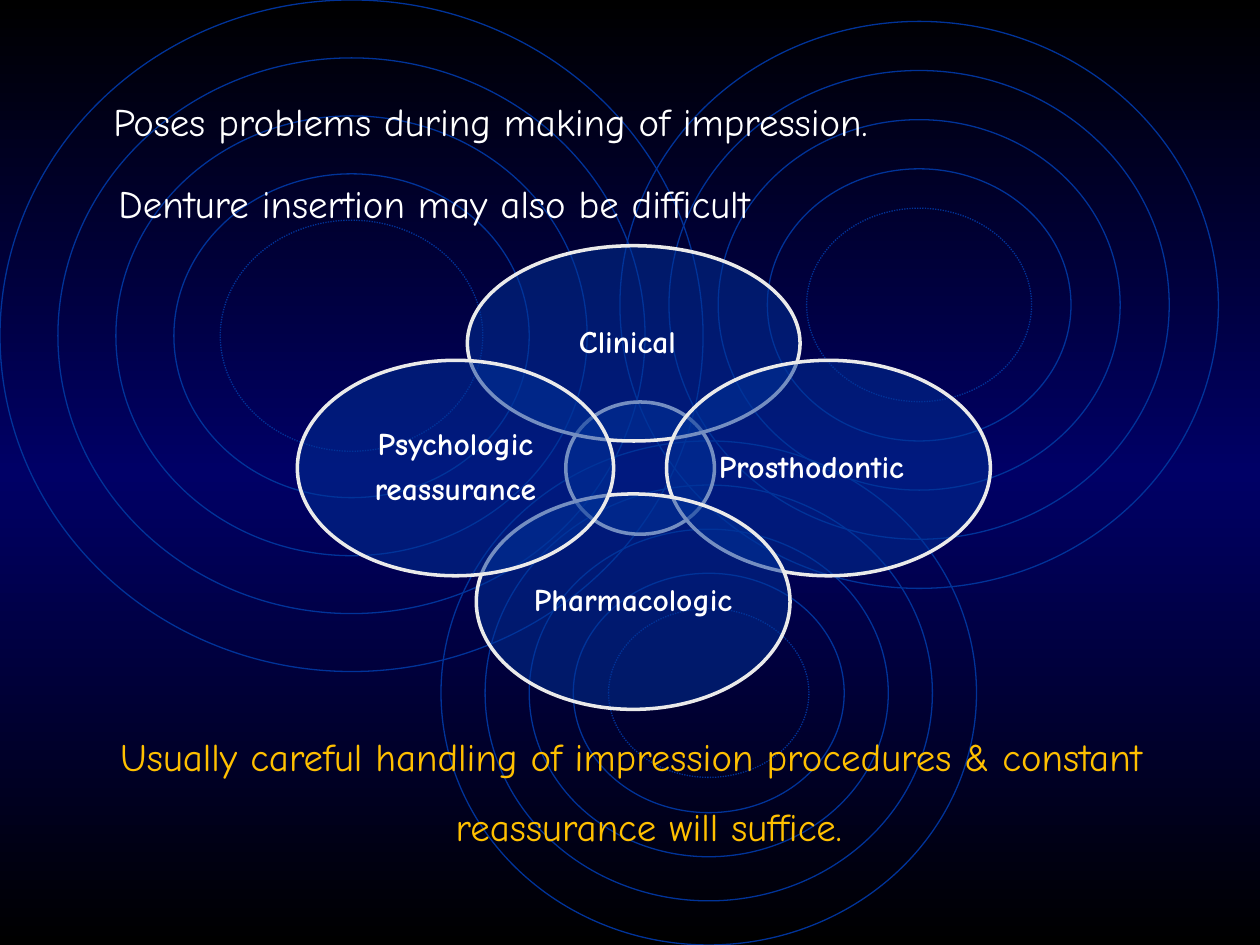
from copy import deepcopy

from lxml.etree import SubElement
from pptx import Presentation
from pptx.dml.color import RGBColor
from pptx.enum.dml import MSO_LINE
from pptx.enum.shapes import MSO_SHAPE
from pptx.enum.text import MSO_ANCHOR, MSO_AUTO_SIZE, PP_ALIGN
from pptx.oxml.ns import qn
from pptx.util import Inches, Pt


def color(value):
    """Turn a hex string into a colour."""
    return RGBColor.from_string(value)


class SlideBuilder:
    """Hold the style and the current slide."""

    font = "Comic Neue"
    ring_color = "003399"
    outline = "EAEAEA"
    white = "FFFFFF"
    gold = "FFC000"

    def __init__(self, deck):
        """Add a page with a body placeholder only."""
        self.page = deck.slides.add_slide(deck.slide_layouts[1])
        title = self.page.shapes.title.element
        title.getparent().remove(title)

    def background(self, edge, middle):
        """Paint a vertical gradient from edge to middle and back."""
        fill = self.page.background.fill
        fill.gradient()
        fill.gradient_angle = 90
        stops = self.page.element.find(".//" + qn("a:gsLst"))
        stops.append(deepcopy(stops[-1]))
        for stop, position, value in zip(fill.gradient_stops, (0, 0.5, 1), (edge, middle, edge)):
            stop.position = position
            stop.color.rgb = color(value)

    def ellipse(self, left, top, width, height, line_color, line_width):
        """Draw an unfilled ellipse."""
        shape = self.page.shapes.add_shape(
            MSO_SHAPE.OVAL, Inches(left), Inches(top), Inches(width), Inches(height))
        shape.shadow.inherit = False
        shape.fill.background()
        shape.line.color.rgb = color(line_color)
        shape.line.width = Pt(line_width)
        return shape

    def rings(self, left, top, width, height, step):
        """Draw concentric rings with a dotted innermost one."""
        for count in (0, 1, 2, 3, 3.8):
            inset = count * step
            ring = self.ellipse(left + inset, top + inset, width - 2 * inset,
                                height - 2 * inset, self.ring_color, 0.75)
        ring.line.dash_style = MSO_LINE.ROUND_DOT

    def petal(self, left, top, width, height, lines=(), right_inset=0.03):
        """Draw a translucent ellipse with centred bold lines."""
        shape = self.ellipse(left, top, width, height, self.outline, 2)
        shape.fill.solid()
        shape.fill.fore_color.rgb = color(self.ring_color)
        shade = shape.element.spPr.find(qn("a:solidFill"))[0]
        SubElement(shade, qn("a:alpha"), val="50000")
        frame = shape.text_frame
        frame.word_wrap = False
        frame.vertical_anchor = MSO_ANCHOR.MIDDLE
        frame.margin_left = frame.margin_top = frame.margin_bottom = Inches(0.03)
        frame.margin_right = Inches(right_inset)
        for index, line in enumerate(lines):
            para = frame.add_paragraph() if index else frame.paragraphs[0]
            para.text = line
            para.alignment = PP_ALIGN.CENTER
            para.line_spacing = 0.9
            para.space_after = Pt(6.3)
            self.style(para, 18, self.white, True)

    def style(self, para, size, value, bold=False):
        """Set the font of a paragraph."""
        para.font.name = self.font
        para.font.size = Pt(size)
        para.font.bold = bold
        para.font.color.rgb = color(value)

    def body(self, left, top, width, height, items):
        """Fill the body placeholder and bring it to the front."""
        box = self.page.placeholders[1]
        box.left, box.top = Inches(left), Inches(top)
        box.width, box.height = Inches(width), Inches(height)
        frame = box.text_frame
        frame.auto_size = MSO_AUTO_SIZE.NONE
        for index, (text, value, alignment, spacing, before, margin, indent) in enumerate(items):
            para = frame.add_paragraph() if index else frame.paragraphs[0]
            para.text = text
            para.alignment = alignment
            para.line_spacing = spacing
            para.space_before = Pt(before)
            properties = para._p.get_or_add_pPr()
            properties.set("marL", str(Inches(margin)))
            properties.set("indent", str(Inches(indent)))
            SubElement(properties, qn("a:buNone"))
            self.style(para, 22.2, value)
        box.element.getparent().append(box.element)


def main():
    """Build the slide."""
    deck = Presentation()
    deck.slide_width, deck.slide_height = Inches(10), Inches(7.5)
    slide = SlideBuilder(deck)
    slide.background("000000", "000066")
    slide.rings(0, 0, 5.58, 5.33, 0.46)
    slide.rings(3.5, 3.5, 4.25, 4, 0.35)
    slide.rings(4.92, 0.17, 4.75, 4.5, 0.39)
    slide.body(0.42, 0.5, 9.08, 6.33, [
        ("Poses problems during making of impression.",
         slide.white, PP_ALIGN.JUSTIFY, 1.6, 4.4, 0.38, 0),
        ("Denture insertion may also be difficult",
         slide.white, PP_ALIGN.JUSTIFY, 1.6, 4.4, 0.42, 0),
        ("Usually careful handling of impression procedures & constant reassurance will suffice.",
         slide.gold, PP_ALIGN.CENTER, 1.5, 276, 0.38, -0.28),
    ])
    slide.petal(4.49, 3.19, 1.18, 1.05)
    slide.petal(3.71, 1.95, 2.64, 1.55, ["Clinical"], 0.13)
    slide.petal(5.29, 2.86, 2.57, 1.71, ["Prosthodontic"], 0.3)
    slide.petal(3.78, 3.92, 2.49, 1.71, ["Pharmacologic"])
    slide.petal(2.36, 2.86, 2.51, 1.71, ["Psychologic", "reassurance"])
    deck.save("out.pptx")


if __name__ == "__main__":
    main()
